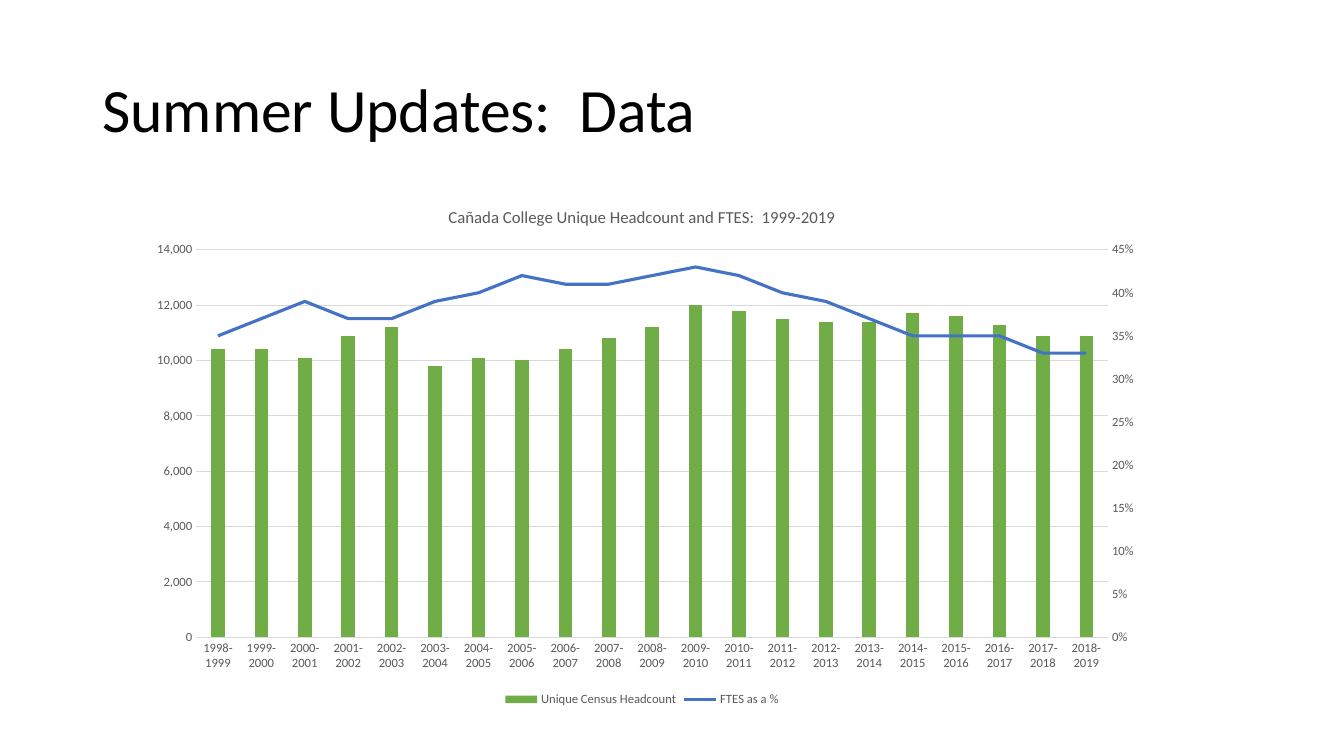
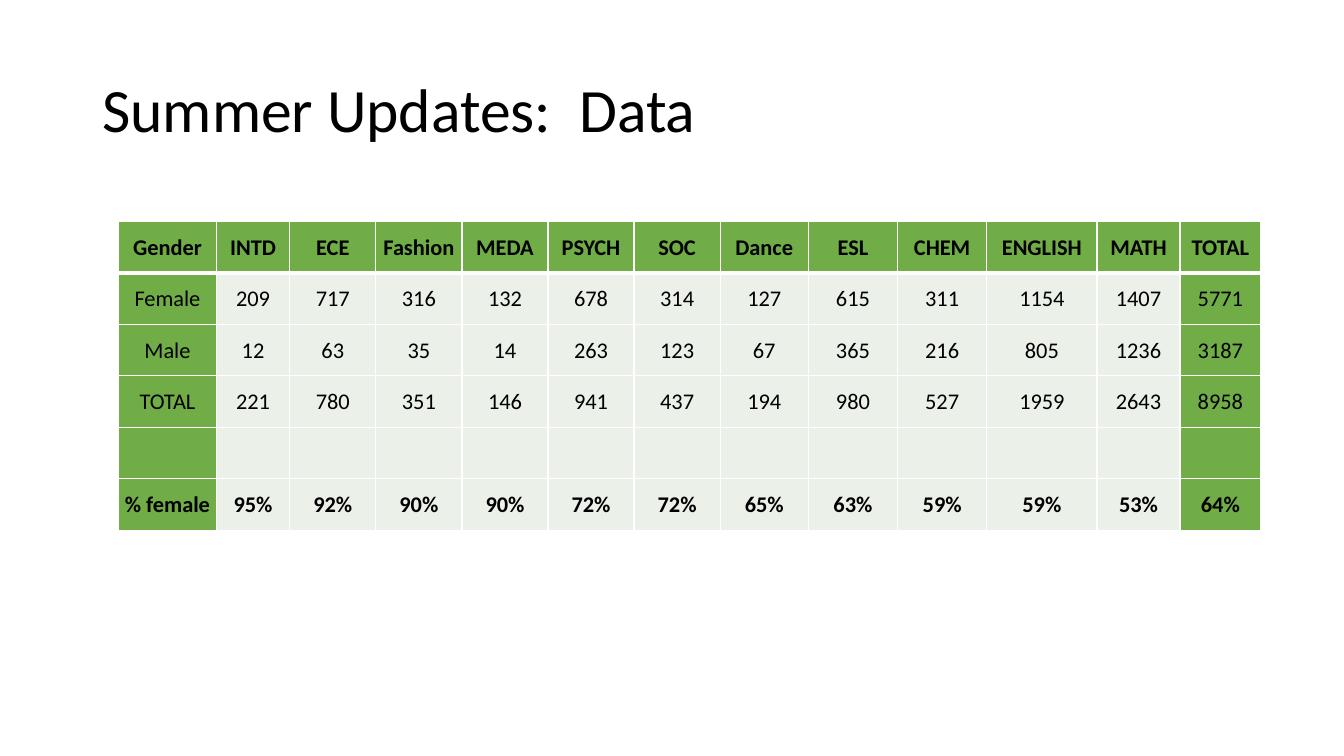
"""Build two summer data slides: a headcount chart and a gender table."""
from copy import deepcopy
from dataclasses import dataclass

from pptx import Presentation
from pptx.chart.axis import CategoryAxis, ValueAxis
from pptx.chart.data import CategoryChartData
from pptx.dml.color import RGBColor
from pptx.enum.chart import (
    XL_CHART_TYPE as ChartType,
    XL_LEGEND_POSITION as LegendPosition,
    XL_MARKER_STYLE as MarkerStyle,
    XL_TICK_MARK as TickMark,
)
from pptx.enum.text import MSO_ANCHOR as Anchor, PP_ALIGN as Align
from pptx.oxml import parse_xml
from pptx.oxml.ns import nsdecls, qn
from pptx.util import Emu, Pt

EMU_PER_PX = 9525
FONT = "Calibri"
BLACK, WHITE, GRAY, RULE = "000000", "FFFFFF", "595959", "D9D9D9"
GREEN, BLUE, PALE = "70AD47", "4472C4", "EBF1E9"
HEADING = "Summer Updates:  Data"


@dataclass(frozen=True)
class Box:
    left: int
    top: int
    width: int
    height: int

    def emu(self) -> tuple:
        return tuple(map(px, (self.left, self.top, self.width, self.height)))


@dataclass(frozen=True)
class TableRow:
    values: tuple
    bold: bool = False
    filled: bool = False


HEADING_BOX = Box(88, 38, 1104, 139)
CHART_BOX = Box(129, 178, 965, 499)
TABLE_LEFT, TABLE_TOP, ROW_HEIGHT = 113, 211, 49
COLUMN_WIDTHS = (93, 70, 82, 82, 82, 82, 82, 84, 85, 85, 105, 79, 77)

HEADCOUNT = (10400, 10400, 10100, 10900, 11200, 9800, 10100, 10000, 10400, 10800, 11200,
             12000, 11800, 11500, 11400, 11400, 11700, 11600, 11300, 10900, 10900)
FTES_SHARE = (0.35, 0.37, 0.39, 0.37, 0.37, 0.39, 0.4, 0.42, 0.41, 0.41, 0.42,
              0.43, 0.42, 0.4, 0.39, 0.37, 0.35, 0.35, 0.35, 0.33, 0.33)

GENDER_ROWS = (
    TableRow(("Gender", "INTD", "ECE", "Fashion", "MEDA", "PSYCH", "SOC", "Dance",
              "ESL", "CHEM", "ENGLISH", "MATH", "TOTAL"), bold=True, filled=True),
    TableRow(("Female", 209, 717, 316, 132, 678, 314, 127, 615, 311, 1154, 1407, 5771)),
    TableRow(("Male", 12, 63, 35, 14, 263, 123, 67, 365, 216, 805, 1236, 3187)),
    TableRow(("TOTAL", 221, 780, 351, 146, 941, 437, 194, 980, 527, 1959, 2643, 8958)),
    TableRow(("",) * len(COLUMN_WIDTHS)),
    TableRow(("% female", "95%", "92%", "90%", "90%", "72%", "72%", "65%", "63%",
              "59%", "59%", "53%", "64%"), bold=True),
)


def px(length: int) -> Emu:
    return Emu(length * EMU_PER_PX)


def color(hex_code: str) -> RGBColor:
    return RGBColor.from_string(hex_code)


def style_font(font, size: float, hex_code: str, bold: bool = False) -> None:
    font.name = FONT
    font.size = Pt(size)
    font.bold = bold
    font.color.rgb = color(hex_code)


def add_headed_slide(deck):
    slide = deck.slides.add_slide(deck.slide_layouts[6])
    frame = slide.shapes.add_textbox(*HEADING_BOX.emu()).text_frame
    frame.word_wrap = True
    frame.vertical_anchor = Anchor.MIDDLE
    frame.text = HEADING
    heading = frame.paragraphs[0]
    heading.line_spacing = 0.9
    style_font(heading.runs[0].font, 44, BLACK)
    return slide


def style_axis(axis) -> None:
    axis.major_tick_mark = axis.minor_tick_mark = TickMark.NONE
    style_font(axis.tick_labels.font, 9, GRAY)


def scale_axis(axis: ValueAxis, top: float, step: float, number_format: str) -> None:
    axis.minimum_scale = 0
    axis.maximum_scale = top
    axis.major_unit = step
    axis.tick_labels.number_format = number_format
    axis.tick_labels.number_format_is_linked = False


def remove_children(parent, tag: str) -> None:
    for child in parent.findall(qn(tag)):
        parent.remove(child)


def move_to_right_axis(chart) -> None:
    columns = chart.plots[0]
    share = columns.series[1]._element
    remove_children(share, "c:invertIfNegative")
    line_plot = parse_xml(
        f'<c:lineChart {nsdecls("c")}><c:grouping val="standard"/><c:varyColors val="0"/>'
        '<c:marker val="1"/><c:axId val="501"/><c:axId val="502"/></c:lineChart>'
    )
    line_plot.insert(2, share)
    columns._element.addnext(line_plot)

    years = deepcopy(chart.category_axis._element)
    percents = deepcopy(chart.value_axis._element)
    for axis, own_id, other_id in ((years, "501", "502"), (percents, "502", "501")):
        axis.find(qn("c:axId")).set("val", own_id)
        axis.find(qn("c:crossAx")).set("val", other_id)
    chart.value_axis._element.addnext(percents)
    percents.addnext(years)
    CategoryAxis(years).visible = False
    percents.find(qn("c:axPos")).set("val", "r")
    remove_children(percents, "c:crosses")
    percents.find(qn("c:crossAx")).addnext(
        parse_xml(f'<c:crosses {nsdecls("c")} val="max"/>')
    )
    right = ValueAxis(percents)
    right.has_major_gridlines = False
    scale_axis(right, 0.45, 0.05, "0%")


def place_plot(chart, x: float, y: float, width: float, height: float) -> None:
    area = chart.plots[0]._element.getparent()
    remove_children(area, "c:layout")
    fractions = "".join(
        f'<c:{tag} val="{value}"/>'
        for tag, value in (("x", x), ("y", y), ("w", width), ("h", height))
    )
    area.insert(0, parse_xml(
        f'<c:layout {nsdecls("c")}><c:manualLayout><c:layoutTarget val="inner"/>'
        f'<c:xMode val="edge"/><c:yMode val="edge"/>{fractions}</c:manualLayout></c:layout>'
    ))


def add_headcount_chart(slide) -> None:
    data = CategoryChartData()
    data.categories = [f"{year}-{year + 1}" for year in range(1998, 2019)]
    data.add_series("Unique Census Headcount", HEADCOUNT, "#,##0")
    data.add_series("FTES as a %", FTES_SHARE, "0%")
    chart = slide.shapes.add_chart(
        ChartType.COLUMN_CLUSTERED, *CHART_BOX.emu(), data
    ).chart
    style_font(chart.font, 10, BLACK)

    chart.has_title = True
    title = chart.chart_title.text_frame
    title.text = "Cañada College Unique Headcount and FTES:  1999-2019"
    style_font(title.paragraphs[0].runs[0].font, 12, GRAY)
    chart.has_legend = True
    chart.legend.position = LegendPosition.BOTTOM
    chart.legend.include_in_layout = False
    style_font(chart.legend.font, 9, GRAY)

    years, counts = chart.category_axis, chart.value_axis
    style_axis(years)
    style_axis(counts)
    scale_axis(counts, 14000, 2000, "#,##0")
    counts.has_major_gridlines = True
    counts.format.line.fill.background()
    for rule in (years.format.line, counts.major_gridlines.format.line):
        rule.color.rgb = color(RULE)
        rule.width = Pt(0.75)

    move_to_right_axis(chart)
    place_plot(chart, 0.06, 0.12, 0.9, 0.74)

    columns, trend = chart.plots
    columns.gap_width = 219
    columns.overlap = -27
    columns.vary_by_categories = False
    bars = columns.series[0].format.fill
    bars.solid()
    bars.fore_color.rgb = color(GREEN)
    share = trend.series[0]
    share.smooth = False
    share.marker.style = MarkerStyle.NONE
    share.format.line.color.rgb = color(BLUE)
    share.format.line.width = Pt(2.25)


def add_borders(cell, top: float, bottom: float) -> None:
    properties = cell._tc.get_or_add_tcPr()
    for side, width in (("L", 1), ("R", 1), ("T", top), ("B", bottom)):
        properties.append(parse_xml(
            f'<a:ln{side} {nsdecls("a")} w="{Pt(width)}"><a:solidFill>'
            f'<a:srgbClr val="{WHITE}"/></a:solidFill></a:ln{side}>'
        ))


def fill_cell(cell, value, fill: str, bold: bool) -> None:
    cell.margin_left = cell.margin_right = cell.margin_top = px(1)
    cell.margin_bottom = 0
    cell.vertical_anchor = Anchor.MIDDLE
    cell.fill.solid()
    cell.fill.fore_color.rgb = color(fill)
    cell.text_frame.text = str(value)
    paragraph = cell.text_frame.paragraphs[0]
    paragraph.alignment = Align.CENTER
    for run in paragraph.runs:
        style_font(run.font, 16, BLACK, bold)


def add_gender_table(slide) -> None:
    box = Box(TABLE_LEFT, TABLE_TOP, sum(COLUMN_WIDTHS), ROW_HEIGHT * len(GENDER_ROWS))
    table = slide.shapes.add_table(
        len(GENDER_ROWS), len(COLUMN_WIDTHS), *box.emu()
    ).table
    table.horz_banding = False
    for column, width in zip(table.columns, COLUMN_WIDTHS):
        column.width = px(width)
    last = len(COLUMN_WIDTHS) - 1
    for row_index, row in enumerate(GENDER_ROWS):
        table.rows[row_index].height = px(ROW_HEIGHT)
        for column_index, value in enumerate(row.values):
            cell = table.cell(row_index, column_index)
            add_borders(cell, 3 if row_index == 1 else 1, 3 if row_index == 0 else 1)
            strong = row.filled or column_index in (0, last)
            fill_cell(cell, value, GREEN if strong else PALE, row.bold)


def main() -> None:
    deck = Presentation()
    deck.slide_width, deck.slide_height = px(1280), px(720)
    add_headcount_chart(add_headed_slide(deck))
    add_gender_table(add_headed_slide(deck))
    deck.save("out.pptx")


if __name__ == "__main__":
    main()
